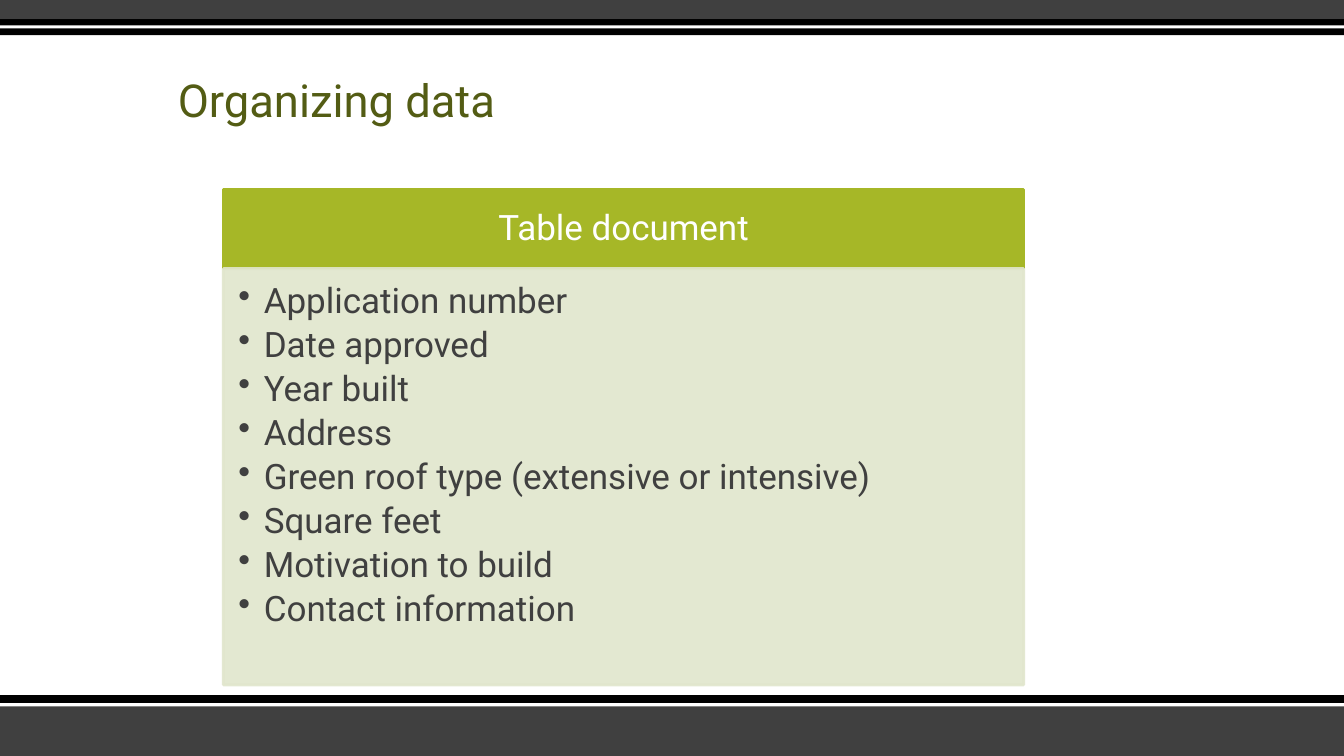
from lxml.etree import SubElement
from pptx import Presentation
from pptx.dml.color import RGBColor
from pptx.enum.shapes import MSO_SHAPE as Kind
from pptx.enum.text import MSO_ANCHOR as Anchor, MSO_AUTO_SIZE as Fit, PP_ALIGN as Align
from pptx.oxml.ns import qn
from pptx.util import Cm, Pt

TITLE = "Organizing data"
HEAD = "Table document"
FIELDS = [
    "Application number", "Date approved", "Year built", "Address",
    "Green roof type (extensive or intensive)", "Square feet",
    "Motivation to build", "Contact information",
]
FONT = "Roboto"
GRAY, BLACK, WHITE = "404040", "000000", "FFFFFF"
OLIVE, GREEN, PALE = "535C14", "A6B727", "E1E6CD"
WIDE, HIGH = 33.87, 19.05
BARS = [  # top, height, colour
    (17.78, 1.27, GRAY), (17.52, 0.27, BLACK), (17.72, 0.08, WHITE),
    (0, 0.48, GRAY), (0.48, 0.41, BLACK), (0.64, 0.08, WHITE),
]
LEFT, TOP, WIDTH = 5.63, 4.77, 20.17
HEAD_H, BODY_H = 2, 10.49


def color(code):
    return RGBColor.from_string(code)


def box(x, y, w, h, fill, line=False, alpha=None):
    shape = slide.shapes.add_shape(Kind.RECTANGLE, Cm(x), Cm(y), Cm(w), Cm(h))
    shape.shadow.inherit = False
    shape.fill.solid()
    shape.fill.fore_color.rgb = color(fill)
    if line:
        shape.line.color.rgb = color(fill)
        shape.line.width = Pt(2)
    else:
        shape.line.fill.background()
    if alpha:
        for tint in shape._element.spPr.iter(qn("a:srgbClr")):
            SubElement(tint, qn("a:alpha"), val=str(alpha * 1000))
    return shape


def write(shape, lines, size, ink, pad, anchor=Anchor.TOP,
          align=Align.LEFT, after=0, bullet=False):
    """Fill a shape with paragraphs; pad is left, top, right, bottom in cm."""
    frame = shape.text_frame
    frame.word_wrap = True
    frame.auto_size = Fit.NONE
    frame.vertical_anchor = anchor
    (frame.margin_left, frame.margin_top,
     frame.margin_right, frame.margin_bottom) = map(Cm, pad)
    frame.text = "\n".join(lines)
    for para in frame.paragraphs:
        if bullet:
            props = para._p.get_or_add_pPr()
            props.set("marL", str(Cm(0.64)))
            props.set("indent", str(-Cm(0.64)))
            SubElement(props, qn("a:buChar"), char="•")
        para.alignment = align
        para.line_spacing = 0.9
        para.space_before = Pt(0)
        para.space_after = Pt(after)
        para.font.size = Pt(size)
        para.font.name = FONT
        para.font.color.rgb = color(ink)


deck = Presentation()
deck.slide_width, deck.slide_height = Cm(WIDE), Cm(HIGH)
slide = deck.slides.add_slide(deck.slide_layouts[5])

for top, height, fill in BARS:
    box(0, top, WIDE, height, fill)

title = slide.shapes.title
title.left, title.top, title.width, title.height = map(Cm, (4.23, 1.7, 25.4, 2.97))
write(title, [TITLE], 32.4, OLIVE, (0.25, 0.13, 0.25, 1.47), anchor=Anchor.BOTTOM)

head = box(LEFT, TOP, WIDTH, HEAD_H, GREEN, line=True)
write(head, [HEAD], 25, WHITE, (0.48, 0.28, 0.48, 0.28),
      anchor=Anchor.MIDDLE, align=Align.CENTER)

body = box(LEFT, TOP + HEAD_H, WIDTH, BODY_H, PALE, line=True, alpha=90)
write(body, FIELDS, 25, GRAY, (0.38, 0.38, 0.48, 0.56), after=4.4, bullet=True)

deck.save("out.pptx")
